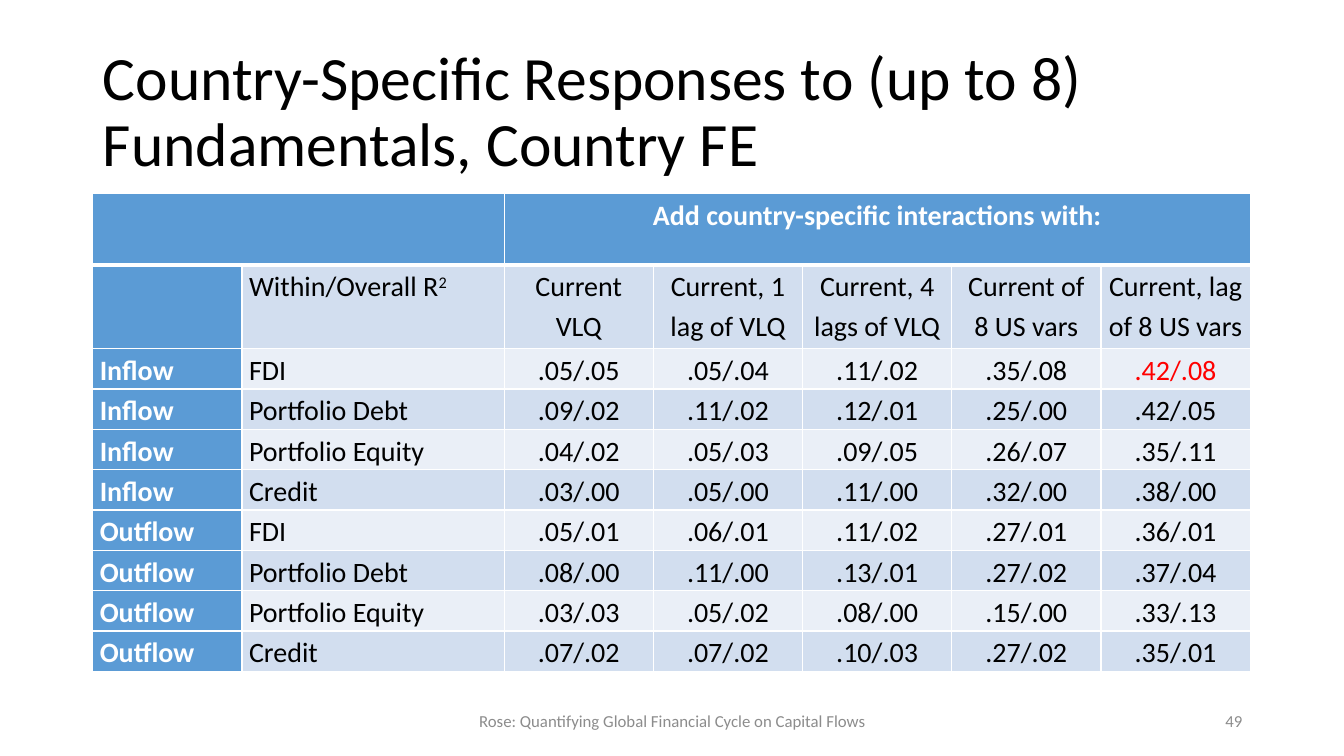
"""Build the slide on country-specific responses to fundamentals."""
from lxml import etree
from pptx import Presentation
from pptx.dml.color import RGBColor
from pptx.enum.text import MSO_ANCHOR, MSO_AUTO_SIZE, PP_ALIGN
from pptx.oxml.ns import qn
from pptx.util import Inches, Pt

LEFT, CENTER, RIGHT = PP_ALIGN.LEFT, PP_ALIGN.CENTER, PP_ALIGN.RIGHT
MIDDLE = MSO_ANCHOR.MIDDLE
NO_AUTOFIT = MSO_AUTO_SIZE.NONE
TITLE_ONLY = 5

BLACK = RGBColor(0x00, 0x00, 0x00)
WHITE = RGBColor(0xFF, 0xFF, 0xFF)
RED = RGBColor(0xFF, 0x00, 0x00)
GRAY = RGBColor(0x8C, 0x8C, 0x8C)
BLUE = RGBColor(0x5B, 0x9B, 0xD5)
DARK_BAND = RGBColor(0xD2, 0xDE, 0xEF)
LIGHT_BAND = RGBColor(0xEA, 0xEF, 0xF7)

FONT = "Calibri"
COLUMN_WIDTHS = [1.48, 2.6] + [1.48] * 5
ROW_HEIGHTS = [0.71, 0.83] + [0.4] * 8
HIGHLIGHT = (2, 6)

HEADINGS = [
    ["", "", "Add country-specific interactions with:", "", "", "", ""],
    ["", "Within/Overall R", "Current VLQ", "Current, 1 lag of VLQ",
     "Current, 4 lags of VLQ", "Current of 8 US vars", "Current, lag of 8 US vars"],
]
RESULTS = [
    ["Inflow", "FDI", ".05/.05", ".05/.04", ".11/.02", ".35/.08", ".42/.08"],
    ["Inflow", "Portfolio Debt", ".09/.02", ".11/.02", ".12/.01", ".25/.00", ".42/.05"],
    ["Inflow", "Portfolio Equity", ".04/.02", ".05/.03", ".09/.05", ".26/.07", ".35/.11"],
    ["Inflow", "Credit", ".03/.00", ".05/.00", ".11/.00", ".32/.00", ".38/.00"],
    ["Outflow", "FDI", ".05/.01", ".06/.01", ".11/.02", ".27/.01", ".36/.01"],
    ["Outflow", "Portfolio Debt", ".08/.00", ".11/.00", ".13/.01", ".27/.02", ".37/.04"],
    ["Outflow", "Portfolio Equity", ".03/.03", ".05/.02", ".08/.00", ".15/.00", ".33/.13"],
    ["Outflow", "Credit", ".07/.02", ".07/.02", ".10/.03", ".27/.02", ".35/.01"],
]


def set_attributes(target, values):
    """Set each named attribute of the target."""
    for name, value in values.items():
        setattr(target, name, value)


def add_run(paragraph, text, size, color, bold=False):
    """Append a formatted run and return it."""
    run = paragraph.add_run()
    run.text = text
    set_attributes(run.font, {"name": FONT, "size": Pt(size), "bold": bold})
    run.font.color.rgb = color
    return run


def fill_frame(frame, text, size, color, align, spacing=1.0):
    """Write one vertically centred paragraph into a text frame."""
    set_attributes(frame, {"word_wrap": True, "auto_size": NO_AUTOFIT,
                           "vertical_anchor": MIDDLE})
    paragraph = frame.paragraphs[0]
    set_attributes(paragraph, {"alignment": align, "line_spacing": spacing})
    add_run(paragraph, text, size, color)


def add_title(slide, text):
    """Place and fill the title placeholder."""
    title = slide.shapes.title
    set_attributes(title, {"left": Inches(0.92), "top": Inches(0.4),
                           "width": Inches(11.5), "height": Inches(1.45)})
    fill_frame(title.text_frame, text, 44, BLACK, LEFT, 0.9)


def add_footer(slide, text, left, width, align):
    """Add a small gray text at the foot of the slide."""
    footer = slide.shapes.add_textbox(
        Inches(left), Inches(6.95), Inches(width), Inches(0.4))
    fill_frame(footer.text_frame, text, 12, GRAY, align)


def add_borders(cell, row):
    """Draw white cell borders, thicker below the top row."""
    properties = cell._tc.get_or_add_tcPr()
    widths = {"a:lnL": 1, "a:lnR": 1,
              "a:lnT": 3 if row == 1 else 1, "a:lnB": 3 if row == 0 else 1}
    for tag, width in widths.items():
        border = etree.SubElement(properties, qn(tag), w=str(Pt(width)))
        solid = etree.SubElement(border, qn("a:solidFill"))
        etree.SubElement(solid, qn("a:srgbClr"), val=str(WHITE))


def format_cell(cell, text, row, column):
    """Fill, border and write a table cell according to its position."""
    is_header = row == 0 or column == 0
    band = LIGHT_BAND if row % 2 == 0 else DARK_BAND
    color = WHITE if is_header else RED if (row, column) == HIGHLIGHT else BLACK
    set_attributes(cell, {"margin_left": Inches(0.07), "margin_right": Inches(0.07),
                          "margin_top": 0, "margin_bottom": 0})
    add_borders(cell, row)
    cell.fill.solid()
    cell.fill.fore_color.rgb = BLUE if is_header else band
    if text:
        paragraph = cell.text_frame.paragraphs[0]
        set_attributes(paragraph, {"alignment": CENTER if column > 1 else LEFT,
                                   "line_spacing": 1.15})
        add_run(paragraph, text, 20, color, is_header)


def add_results_table(slide):
    """Add the table of within and overall R² values."""
    rows = HEADINGS + RESULTS
    table = slide.shapes.add_table(
        len(rows), len(COLUMN_WIDTHS), Inches(0.92), Inches(1.92),
        Inches(sum(COLUMN_WIDTHS)), Inches(sum(ROW_HEIGHTS))).table
    set_attributes(table, {"first_row": False, "horz_banding": False})
    for column, width in zip(table.columns, COLUMN_WIDTHS):
        column.width = Inches(width)
    for row, height in zip(table.rows, ROW_HEIGHTS):
        row.height = Inches(height)
    for r, texts in enumerate(rows):
        for c, text in enumerate(texts):
            format_cell(table.cell(r, c), text, r, c)
    table.cell(0, 0).merge(table.cell(0, 1))
    table.cell(0, 2).merge(table.cell(0, 6))
    measure = table.cell(1, 1).text_frame.paragraphs[0]
    exponent = add_run(measure, "2", 20, BLACK)
    exponent.font._element.set("baseline", "30000")


def main():
    """Build and save the presentation."""
    deck = Presentation()
    set_attributes(deck, {"slide_width": Inches(13.33), "slide_height": Inches(7.5)})
    slide = deck.slides.add_slide(deck.slide_layouts[TITLE_ONLY])
    add_title(slide, "Country-Specific Responses to (up to 8) Fundamentals, Country FE")
    add_results_table(slide)
    add_footer(slide, "Rose: Quantifying Global Financial Cycle on Capital Flows",
               4.42, 4.5, CENTER)
    add_footer(slide, "49", 9.42, 3, RIGHT)
    deck.save("out.pptx")


if __name__ == "__main__":
    main()
